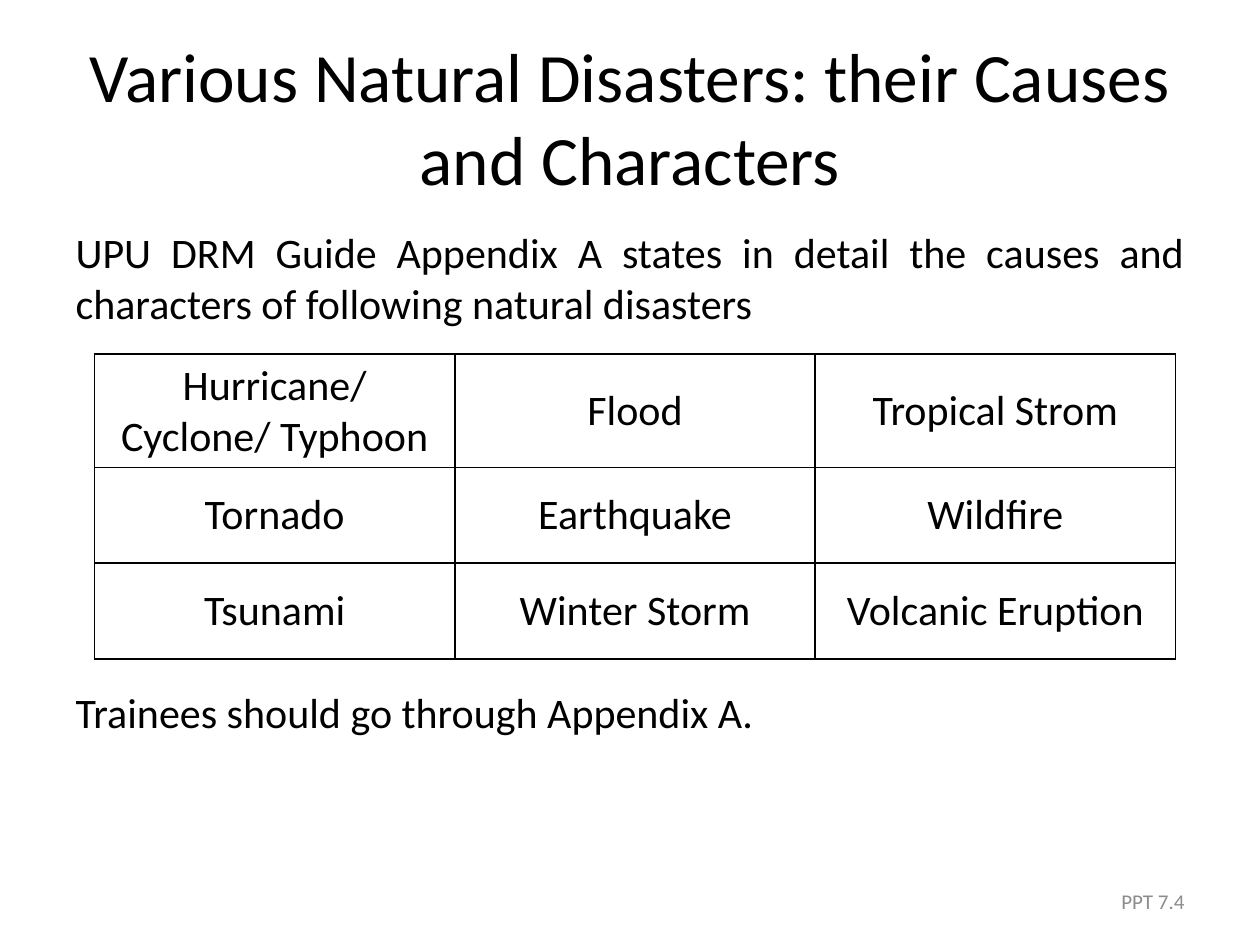
"""Build a slide that lists natural disasters in a three by three table."""
from dataclasses import dataclass

from lxml.etree import SubElement
from pptx import Presentation
from pptx.dml.color import RGBColor
from pptx.enum.text import MSO_ANCHOR, PP_ALIGN
from pptx.oxml.ns import qn
from pptx.util import Inches, Pt

TITLE = "Various Natural Disasters: their Causes and Characters"
INTRO = ("UPU DRM Guide Appendix A states in detail the causes and characters "
         "of following natural disasters")
CLOSING = "Trainees should go through Appendix A."
PAGE_LABEL = "PPT 7.4"
DISASTERS = [
    ("Hurricane/ Cyclone/ Typhoon", "Flood", "Tropical Strom"),
    ("Tornado", "Earthquake", "Wildfire"),
    ("Tsunami", "Winter Storm", "Volcanic Eruption"),
]


@dataclass(frozen=True)
class Theme:
    font: str = "Calibri"
    ink: str = "000000"
    muted: str = "8C8C8C"
    title_size: float = 39.6
    body_size: float = 24
    label_size: float = 12
    border_width: float = 1


THEME = Theme()
WIDTH, HEIGHT = Inches(10), Inches(7.5)
MARGIN = WIDTH * 0.05
CONTENT_WIDTH = WIDTH - 2 * MARGIN
TABLE_LEFT, TABLE_TOP = Inches(0.75), Inches(2.81)
COLUMN_WIDTH = Inches(2.86)
ROW_HEIGHTS = [Inches(0.87), Inches(0.76), Inches(0.76)]
TABLE_GAP = Pt(205)


def write(paragraph, text, size=THEME.body_size, color=THEME.ink,
          align=PP_ALIGN.CENTER, before=Pt(0)):
    paragraph.alignment = align
    paragraph.space_before = before
    run = paragraph.add_run()
    run.text = text
    run.font.name = THEME.font
    run.font.size = Pt(size)
    run.font.bold = False
    run.font.color.rgb = RGBColor.from_string(color)


def place(shape, left, top, width, height):
    shape.left, shape.top = int(left), int(top)
    shape.width, shape.height = int(width), int(height)


def remove_bullet(paragraph):
    properties = paragraph._p.get_or_add_pPr()
    properties.set("marL", "0")
    properties.set("indent", "0")
    SubElement(properties, qn("a:buNone"))


def draw_borders(cell):
    properties = cell._tc.get_or_add_tcPr()
    for side in ("L", "R", "T", "B"):
        border = SubElement(properties, qn(f"a:ln{side}"),
                            w=str(Pt(THEME.border_width)))
        fill = SubElement(border, qn("a:solidFill"))
        SubElement(fill, qn("a:srgbClr"), val=THEME.ink)


def add_title(slide):
    title = slide.shapes.title
    place(title, MARGIN, HEIGHT * 0.04, CONTENT_WIDTH, Inches(1.25))
    title.text_frame.vertical_anchor = MSO_ANCHOR.MIDDLE
    write(title.text_frame.paragraphs[0], TITLE, size=THEME.title_size)


def add_body(slide):
    body = slide.placeholders[1]
    place(body, MARGIN, Inches(1.75), CONTENT_WIDTH, Inches(4.95))
    frame = body.text_frame
    intro, closing = frame.paragraphs[0], frame.add_paragraph()
    write(intro, INTRO, align=PP_ALIGN.JUSTIFY)
    write(closing, CLOSING, align=PP_ALIGN.JUSTIFY, before=TABLE_GAP)
    for paragraph in (intro, closing):
        remove_bullet(paragraph)


def add_page_label(slide):
    label = slide.shapes.add_textbox(Inches(7.17), Inches(6.95),
                                     Inches(2.33), Inches(0.4))
    label.text_frame.word_wrap = True
    label.text_frame.vertical_anchor = MSO_ANCHOR.MIDDLE
    write(label.text_frame.paragraphs[0], PAGE_LABEL, size=THEME.label_size,
          color=THEME.muted, align=PP_ALIGN.RIGHT)


def add_disaster_table(slide):
    columns = len(DISASTERS[0])
    table = slide.shapes.add_table(
        len(DISASTERS), columns, TABLE_LEFT, TABLE_TOP,
        COLUMN_WIDTH * columns, sum(ROW_HEIGHTS)).table
    table.first_row = table.horz_banding = False
    for column in table.columns:
        column.width = COLUMN_WIDTH
    for row, height, names in zip(table.rows, ROW_HEIGHTS, DISASTERS):
        row.height = height
        for cell, name in zip(row.cells, names):
            draw_borders(cell)
            cell.fill.background()
            cell.vertical_anchor = MSO_ANCHOR.MIDDLE
            write(cell.text_frame.paragraphs[0], name)


def main():
    deck = Presentation()
    deck.slide_width, deck.slide_height = WIDTH, HEIGHT
    slide = deck.slides.add_slide(deck.slide_layouts[1])
    add_title(slide)
    add_body(slide)
    add_page_label(slide)
    add_disaster_table(slide)
    deck.save("out.pptx")


if __name__ == "__main__":
    main()
